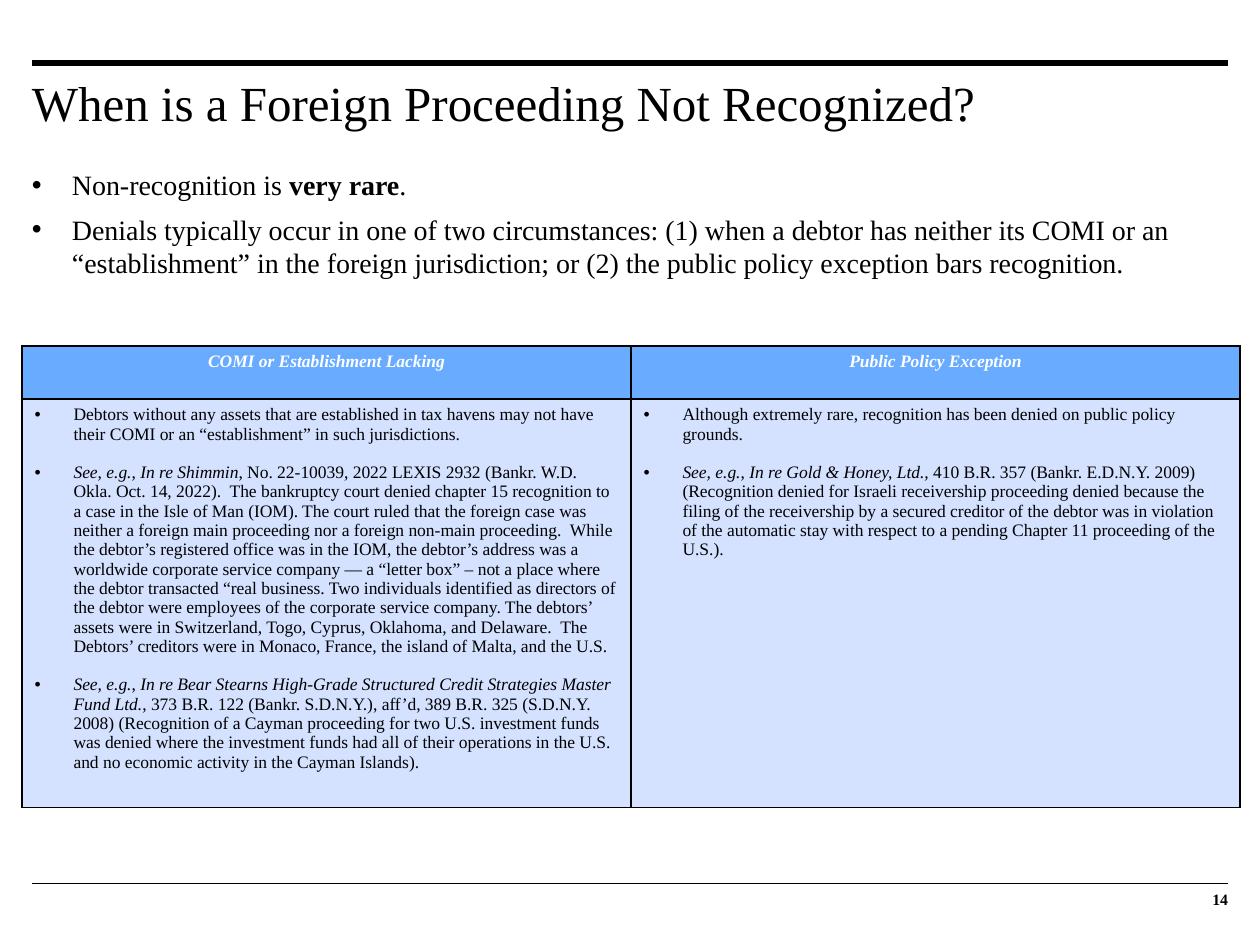
from lxml import etree
from pptx import Presentation, util as u
from pptx.dml.color import RGBColor
from pptx.enum import shapes, text
from pptx.oxml.ns import qn

PX = 914400 / 126
FONT = "Times New Roman"
COLORS = {"ink": "000000", "white": "FFFFFF", "header": "68ABFF", "body": "D4E2FF"}


def write(paragraph, parts, size, color="ink", indent=0):
    """Fill a paragraph with (wording, style) parts; style holds b and/or i."""
    if indent:
        props = paragraph._p.get_or_add_pPr()
        props.set("marL", str(round(indent * PX)))
        props.set("indent", str(-round(indent * PX)))
        etree.SubElement(props, qn("a:buFont"), typeface="Arial")
        etree.SubElement(props, qn("a:buChar"), char="•")
    for wording, style in parts:
        run = paragraph.add_run()
        run.text = wording
        run.font.name, run.font.size = FONT, u.Pt(size)
        run.font.bold, run.font.italic = "b" in style, "i" in style
        run.font.color.rgb = RGBColor.from_string(COLORS[color])


def add_frame(left, top, width, height):
    box = slide.shapes.add_textbox(*[round(v * PX) for v in (left, top, width, height)])
    frame = box.text_frame
    frame.word_wrap = True
    frame.margin_left = frame.margin_top = frame.margin_right = frame.margin_bottom = 0
    return frame


deck = Presentation()
deck.slide_width, deck.slide_height = round(1260 * PX), round(945 * PX)
slide = deck.slides.add_slide(deck.slide_layouts[6])

# Rules above the title and above the page number
for y, weight in ((63, 3), (883, 0.5)):
    rule = slide.shapes.add_connector(
        shapes.MSO_CONNECTOR.STRAIGHT, *[round(v * PX) for v in (32, y, 1228, y)])
    rule.line.color.rgb = RGBColor.from_string(COLORS["ink"])
    rule.line.width = u.Pt(weight)
    etree.SubElement(rule._element.spPr, qn("a:effectLst"))

# Page number
page_number = add_frame(1144, 883, 84, 33)
page_number.vertical_anchor = text.MSO_ANCHOR.MIDDLE
page_number.paragraphs[0].alignment = text.PP_ALIGN.RIGHT
write(page_number.paragraphs[0], [("14", "b")], 9)

# Title
title = add_frame(32, 73, 1197, 125)
write(title.paragraphs[0], [("When is a Foreign Proceeding Not Recognized?", "")], 28)

# Key points
key_points = [
    [("Non-recognition is ", ""), ("very rare", "b"), (".", "")],
    [("Denials typically occur in one of two circumstances: (1) when a debtor has neither "
      "its COMI or an “establishment” in the foreign jurisdiction; or (2) the public policy "
      "exception bars recognition.", "")],
]
points = add_frame(32, 168, 1197, 150)
for i, parts in enumerate(key_points):
    point = points.add_paragraph() if i else points.paragraphs[0]
    point.space_after = u.Pt(6)
    write(point, parts, 16, indent=40)

# Grounds for denial, one table column each
SEE = [("See, e.g.", "i"), (", ", "")]
grounds = {
    "COMI or Establishment Lacking": [
        [("Debtors without any assets that are established in tax havens may not have their "
          "COMI or an “establishment” in such jurisdictions.", "")],
        SEE + [
            ("In re Shimmin", "i"),
            (", No. 22-10039, 2022 LEXIS 2932 (Bankr. W.D. Okla. Oct. 14, 2022).  The "
             "bankruptcy court denied chapter 15 recognition to a case in the Isle of Man "
             "(IOM). The court ruled that the foreign case was neither a foreign main "
             "proceeding nor a foreign non-main proceeding.  While the debtor’s registered "
             "office was in the IOM, the debtor’s address was a worldwide corporate service "
             "company — a “letter box” – not a place where the debtor transacted “real "
             "business. Two individuals identified as directors of the debtor were employees "
             "of the corporate service company. The debtors’ assets were in Switzerland, "
             "Togo, Cyprus, Oklahoma, and Delaware.  The Debtors’ creditors were in Monaco, "
             "France, the island of Malta, and the U.S.", "")],
        SEE + [
            ("In re Bear Stearns High-Grade Structured Credit Strategies Master Fund Ltd.", "i"),
            (", 373 B.R. 122 (Bankr. S.D.N.Y.), aff’d, 389 B.R. 325 (S.D.N.Y. 2008) "
             "(Recognition of a Cayman proceeding for two U.S. investment funds was denied "
             "where the investment funds had all of their operations in the U.S. and no "
             "economic activity in the Cayman Islands).", "")],
    ],
    "Public Policy Exception": [
        [("Although extremely rare, recognition has been denied on public policy grounds.", "")],
        SEE + [
            ("In re Gold & Honey, Ltd., ", "i"),
            ("410 B.R. 357 (Bankr. E.D.N.Y. 2009) (Recognition denied for Israeli "
             "receivership proceeding denied because the filing of the receivership by a "
             "secured creditor of the debtor was in violation of the automatic stay with "
             "respect to a pending Chapter 11 proceeding of the U.S.).", "")],
    ],
}
table = slide.shapes.add_table(
    2, 2, *[round(v * PX) for v in (22, 346, 1218, 452)]).table
for row, height in zip(table.rows, (53, 399)):
    row.height = round(height * PX)

for col, (heading, cases) in enumerate(grounds.items()):
    header, body = table.cell(0, col), table.cell(1, col)
    header.text_frame.paragraphs[0].alignment = text.PP_ALIGN.CENTER
    write(header.text_frame.paragraphs[0], [(heading, "bi")], 10, "white")
    for i, parts in enumerate(cases):
        case = body.text_frame.add_paragraph() if i else body.text_frame.paragraphs[0]
        if i:
            case.space_before = u.Pt(11)
        write(case, parts, 10, indent=39)

    # Fills and thin black borders
    for cell, shade in ((header, "header"), (body, "body")):
        props = cell._tc.get_or_add_tcPr()
        for side in ("lnL", "lnR", "lnT", "lnB"):
            border = etree.SubElement(props, qn(f"a:{side}"), w=str(u.Pt(1)))
            stroke = etree.SubElement(border, qn("a:solidFill"))
            etree.SubElement(stroke, qn("a:srgbClr"), val=COLORS["ink"])
        cell.fill.solid()
        cell.fill.fore_color.rgb = RGBColor.from_string(COLORS[shade])

deck.save("out.pptx")
